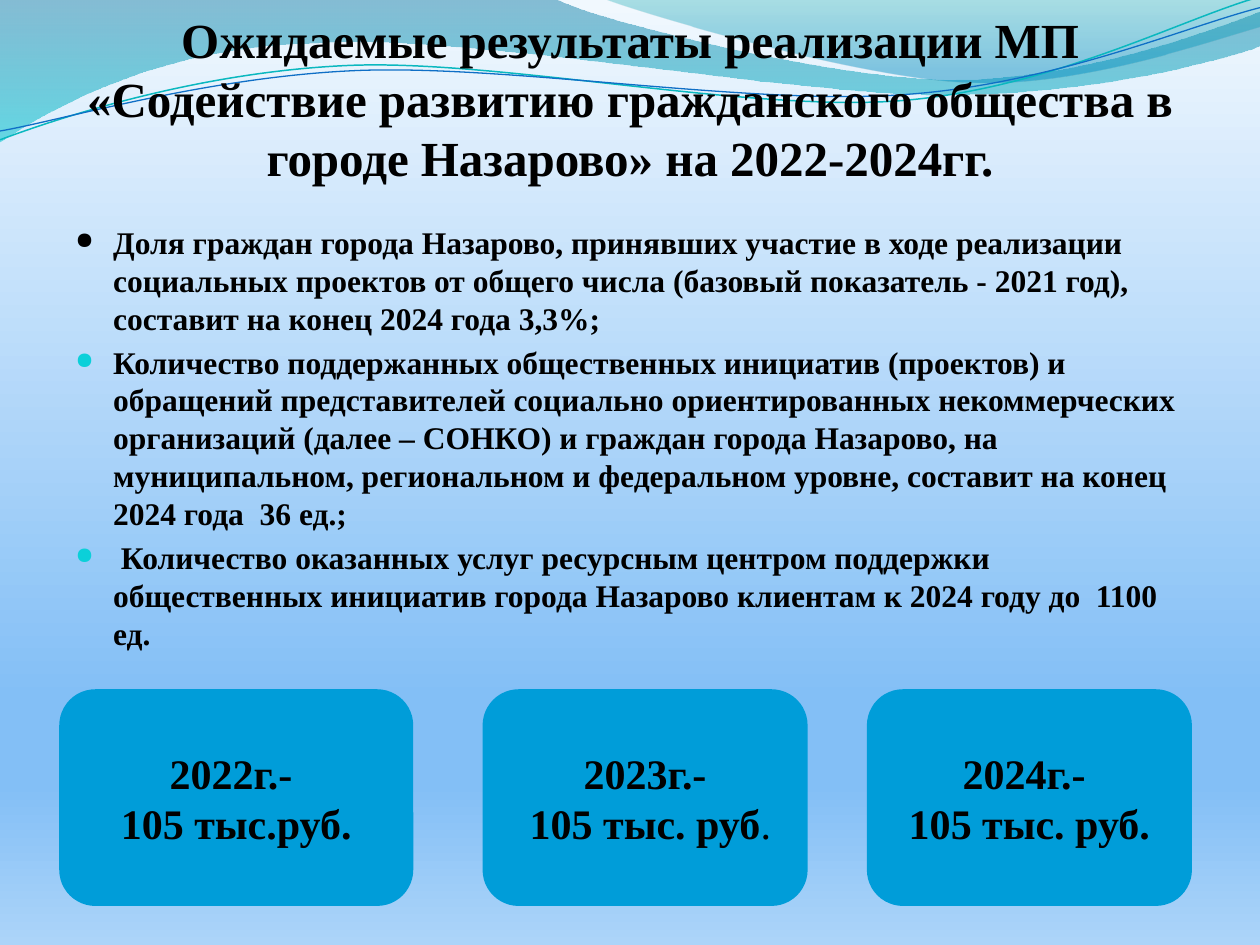
import math

from lxml import etree
from pptx import Presentation
from pptx import util as u
from pptx.dml.color import RGBColor
from pptx.enum import shapes, text
from pptx.oxml.ns import qn

BLACK = RGBColor(0x00, 0x00, 0x00)
BLUE = RGBColor(0x00, 0x9D, 0xD9)
TEAL_LINE = RGBColor(0x0A, 0xB8, 0xBF)
NAVY_LINE = RGBColor(0x0F, 0x6F, 0xC6)
BULLET_TEAL = RGBColor(0x0B, 0xD0, 0xD9)
SKY = [(0, RGBColor(0xF1, 0xF8, 0xFE), 100), (74, RGBColor(0x83, 0xBF, 0xF6), 100),
       (83, RGBColor(0x83, 0xBF, 0xF6), 100), (100, RGBColor(0xAC, 0xD4, 0xF9), 100)]
WAVE_LEFT = [(0, RGBColor(0x00, 0x74, 0xA1), 45), (100, RGBColor(0x00, 0xC6, 0xCF), 55)]
WAVE_RIGHT = [(0, RGBColor(0x00, 0xA1, 0xA9), 30), (80, RGBColor(0x00, 0x8B, 0xBF), 45)]
UNITS = 1000  # outline units per inch
TILT = -2.7  # degrees, for the two thin lines


def paint_gradient(holder, stops):
    """Replace the solid fill in holder by a top-to-bottom gradient of (position, colour, opacity)."""
    gradient = etree.Element(qn("a:gradFill"), rotWithShape="1")
    stop_list = etree.SubElement(gradient, qn("a:gsLst"))
    for position, colour, opacity in stops:
        stop = etree.SubElement(stop_list, qn("a:gs"), pos=str(position * 1000))
        shade = etree.SubElement(stop, qn("a:srgbClr"), val=str(colour))
        if opacity < 100:
            etree.SubElement(shade, qn("a:alpha"), val=str(opacity * 1000))
    etree.SubElement(gradient, qn("a:lin"), ang="5400000", scaled="0")
    holder.replace(holder.find(qn("a:solidFill")), gradient)


def style_paragraph(para, size, align):
    para.alignment = align
    for span in para.runs:
        span.font.size = u.Pt(size)
        span.font.name = "Times New Roman"
        span.font.bold = True
        span.font.color.rgb = BLACK


deck = Presentation()
deck.slide_width, deck.slide_height = u.Inches(10), u.Inches(7.5)
page = deck.slides.add_slide(deck.slide_layouts[6])
page.background.fill.solid()
paint_gradient(page.element.find(".//" + qn("p:bgPr")), SKY)

# Waves: a pair is a straight step, six numbers are a Bezier curve
waves = [
    ([(0, 0), (4.4, -0.01), (4.76, 0.17, 6.64, 0.63, 7.58, 0.63),
      (8.53, 0.63, 9.58, 0.26, 10, 0.09), (10.01, 0.36),
      (9.83, 0.44, 8.7, 0.76, 7.46, 0.75), (6.22, 0.75, 3.82, 0.28, 2.57, 0.34),
      (1.29, 0.36, 0.46, 0.83, -0.01, 1.13), (0, 0)], WAVE_LEFT, None, 0, 0),
    ([(4.79, -0.01), (5.09, 0.11, 6.82, 0.62, 7.69, 0.65),
      (8.56, 0.69, 9.61, 0.32, 10, 0.21), (10, 0), (4.79, -0.01)], WAVE_RIGHT, None, 0, 0),
    ([(0, 1.11), (0.48, 0.93, 1.58, 0.57, 2.77, 0.52), (3.95, 0.47, 5.93, 0.89, 7.13, 0.8),
      (8.33, 0.71, 9.38, 0.15, 9.98, -0.02)], None, TEAL_LINE, 0.85, TILT),
    ([(0, 1.04), (0.47, 0.96, 1.64, 0.61, 2.83, 0.56), (4.03, 0.51, 5.97, 0.84, 7.17, 0.75),
      (8.36, 0.67, 9.41, 0.21, 10, 0.06)], None, NAVY_LINE, 0.75, TILT),
]
for pieces, stops, line_colour, line_width, tilt in waves:
    # Level the points about the wave's centre; the shape's rotation tilts them again
    cos, sin = math.cos(math.radians(-tilt)), math.sin(math.radians(-tilt))
    points = []
    for piece in pieces:
        for x, y in zip(piece[::2], piece[1::2]):
            dx, dy = x - 4.99, y - 0.58
            points.append(((4.99 + dx * cos - dy * sin) * UNITS,
                           (0.58 + dx * sin + dy * cos) * UNITS))
    builder = page.shapes.build_freeform(*points[0], scale=u.Inches(1) / UNITS)
    builder.add_line_segments(points[1:], close=stops is not None)
    wave = builder.convert_to_shape()
    wave.rotation = tilt
    wave.shadow.inherit = False

    segments = iter(list(wave.element.iter(qn("a:lnTo"))))
    for piece in pieces[1:]:
        segment = next(segments)
        if len(piece) == 6:
            segment.tag = qn("a:cubicBezTo")
            for _ in range(2):
                control = next(segments)
                segment.append(control[0])
                control.getparent().remove(control)

    if stops:
        wave.fill.solid()
        paint_gradient(wave.element.spPr, stops)
        wave.line.fill.background()
    else:
        wave.fill.background()
        wave.line.color.rgb = line_colour
        wave.line.width = u.Pt(line_width)

# Title
title = page.shapes.add_textbox(u.Inches(0.5), 0, u.Inches(9), u.Inches(1.48))
frame = title.text_frame
frame.word_wrap = True
frame.vertical_anchor = text.MSO_ANCHOR.BOTTOM
frame.margin_left = frame.margin_right = frame.margin_bottom = 0
frame.text = ("Ожидаемые результаты реализации МП «Содействие развитию "
              "гражданского общества в городе Назарово» на 2022-2024гг.")
style_paragraph(frame.paragraphs[0], 28, text.PP_ALIGN.CENTER)

# Expected results
results = [
    ("Доля граждан города Назарово, принявших участие в ходе реализации социальных проектов "
     "от общего числа (базовый показатель - 2021 год), составит на конец 2024 года 3,3%;", BLACK),
    ("Количество поддержанных общественных инициатив (проектов) и обращений представителей "
     "социально ориентированных некоммерческих организаций (далее – СОНКО) и граждан города "
     "Назарово, на муниципальном, региональном и федеральном уровне, составит на конец "
     "2024 года  36 ед.;", BULLET_TEAL),
    (" Количество оказанных услуг ресурсным центром поддержки общественных инициатив города "
     "Назарово клиентам к 2024 году до  1100 ед.", BULLET_TEAL),
]
body = page.shapes.add_textbox(u.Inches(0.5), u.Inches(1.72), u.Inches(9), u.Inches(5.55))
frame = body.text_frame
frame.word_wrap = True
frame.text = "\n".join(wording for wording, _ in results)
for para, (_, bullet_colour) in zip(frame.paragraphs, results):
    style_paragraph(para, 18, text.PP_ALIGN.LEFT)
    para.space_before = u.Pt(3.6)
    props = para._p.get_or_add_pPr()
    props.set("marL", str(u.Inches(0.3)))
    props.set("indent", str(-u.Inches(0.3)))
    tint = etree.SubElement(props, qn("a:buClr"))
    etree.SubElement(tint, qn("a:srgbClr"), val=str(bullet_colour))
    etree.SubElement(props, qn("a:buSzPct"), val="74000")
    etree.SubElement(props, qn("a:buChar"), char="●")

# Yearly funding
funding = [
    (0.47, 2.81, ["2022г.- "], ["105 тыс.руб."]),
    (3.83, 2.58, ["2023г.-"], [" 105 тыс. руб", "."]),
    (6.88, 2.58, ["2024г.- "], ["105 тыс. руб."]),
]
for left, width, *lines in funding:
    box = page.shapes.add_shape(shapes.MSO_SHAPE.ROUNDED_RECTANGLE, u.Inches(left),
                                u.Inches(5.47), u.Inches(width), u.Inches(1.72))
    box.shadow.inherit = False
    box.fill.solid()
    box.fill.fore_color.rgb = BLUE
    box.line.fill.background()
    frame = box.text_frame
    frame.vertical_anchor = text.MSO_ANCHOR.MIDDLE
    frame.text = "\n".join(spans[0] for spans in lines)
    for para, spans in zip(frame.paragraphs, lines):
        for extra in spans[1:]:
            para.add_run().text = extra
        style_paragraph(para, 24, text.PP_ALIGN.CENTER)
        for span in para.runs[1:]:
            span.font.bold = False

deck.save("out.pptx")
